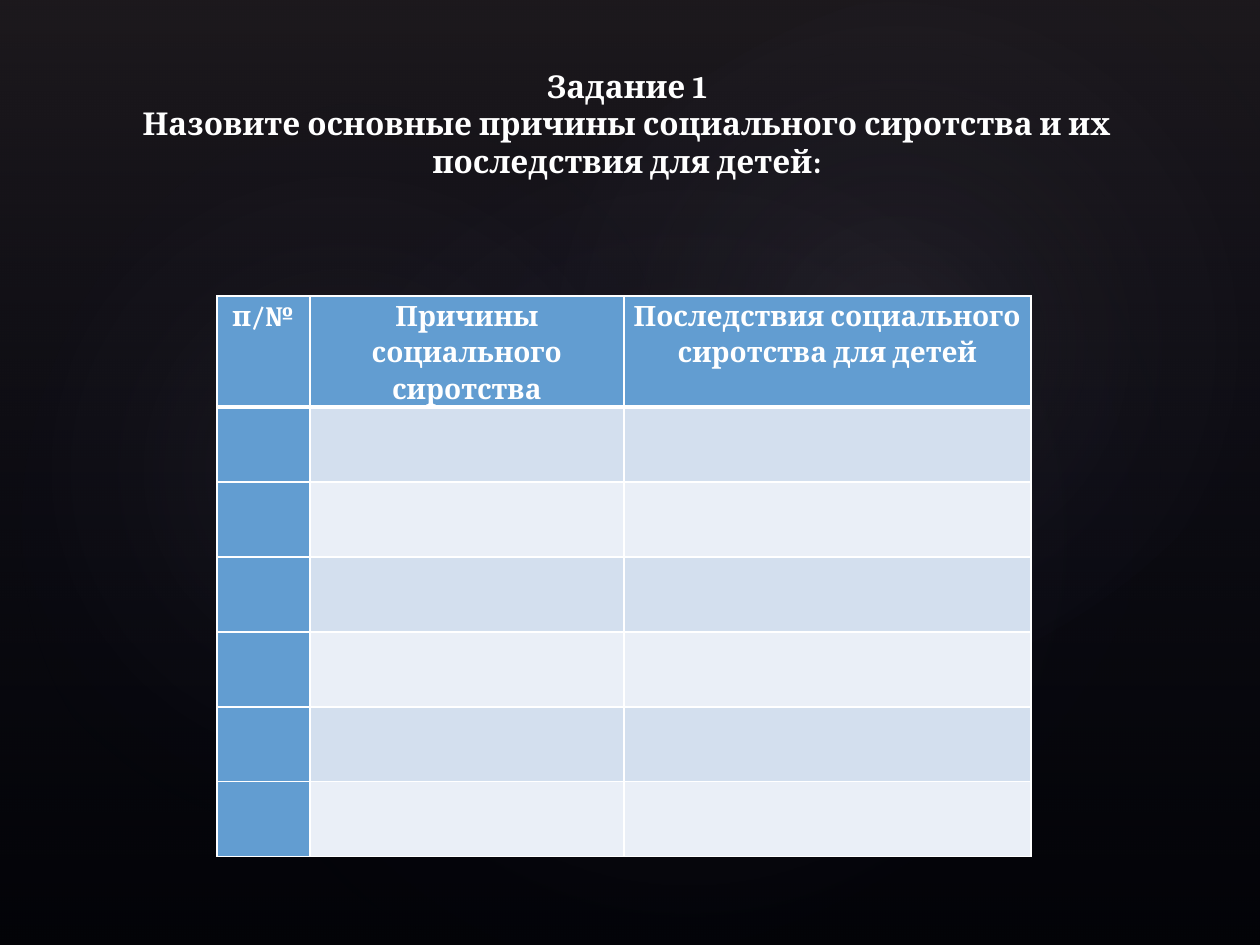
from lxml import etree
from pptx import Presentation
from pptx import util as u
from pptx.dml.color import RGBColor
from pptx.enum import shapes, text
from pptx.oxml import ns

PX = 914400 // 126
color = RGBColor.from_string


def write(frame, words, size, spacing=1.0):
    frame.text = words
    para = frame.paragraphs[0]
    para.alignment = text.PP_ALIGN.CENTER
    para.line_spacing = spacing
    for span in para.runs:
        span.font.name = "Cambria"
        span.font.size = u.Pt(size)
        span.font.bold = True
        span.font.color.rgb = color("FFFFFF")


def add_child(parent, tag, **attributes):
    child = etree.SubElement(parent, ns.qn(tag))
    for key, value in attributes.items():
        child.set(key, str(value))
    return child


deck = Presentation()
deck.slide_width = 1260 * PX
deck.slide_height = 945 * PX
page = deck.slides.add_slide(deck.slide_layouts[5])
page.background.fill.solid()
page.background.fill.fore_color.rgb = color("000000")

shade = [(0, "504652", 36), (100, "242852", 10)]
soft_glow = [(0, "C4BCC6", 7), (58, "242852", 0)]
glow = [(0, "C4BCC6", 8), (58, "242852", 0)]
RECT, OVAL = shapes.MSO_SHAPE.RECTANGLE, shapes.MSO_SHAPE.OVAL
backdrop = [
    (RECT, 0, 0, 1260, 945, 0, shade),
    (OVAL, 189, 144, 998, 786, 328.7, soft_glow),
    (OVAL, -38, 161, 764, 617, 294.3, glow),
    (OVAL, 451, 16, 893, 655, 328.7, glow),
]
for kind, left, top, width, height, angle, stops in backdrop:
    light = page.shapes.add_shape(kind, left * PX, top * PX, width * PX, height * PX)
    light.rotation = angle
    light.shadow.inherit = False
    light.line.fill.background()
    light.fill.gradient()
    gradient = light.element.spPr.find(ns.qn("a:gradFill"))
    for child in list(gradient):
        gradient.remove(child)
    stop_list = add_child(gradient, "a:gsLst")
    for place, tint, opacity in stops:
        stop = add_child(stop_list, "a:gs", pos=place * 1000)
        add_child(add_child(stop, "a:srgbClr", val=tint), "a:alpha", val=opacity * 1000)
    if kind == RECT:
        add_child(gradient, "a:lin", ang=5400000, scaled=0)
    else:
        focus = add_child(gradient, "a:path", path="circle")
        add_child(focus, "a:fillToRect", l=50000, t=50000, r=50000, b=50000)

columns = [93, 314, 407]
rows = [111] + [75] * 6
headings = ["п/№", "Причины социального сиротства", "Последствия социального сиротства для детей"]
holder = page.shapes.add_table(
    len(rows), len(columns), 217 * PX, 296 * PX, sum(columns) * PX, sum(rows) * PX
)
table = holder.table
for column, width in zip(table.columns, columns):
    column.width = width * PX
for r, height in enumerate(rows):
    table.rows[r].height = height * PX
    for c, heading in enumerate(headings):
        cell = table.cell(r, c)
        cell.margin_left = cell.margin_right = 9 * PX
        cell.margin_top = cell.margin_bottom = 0
        cell.fill.solid()
        band = "D3DFEE" if r % 2 else "EAEFF7"
        cell.fill.fore_color.rgb = color("629DD1" if r == 0 or c == 0 else band)
        if r == 0:
            write(cell.text_frame, heading, 16, 1.15)

for i, properties in enumerate(holder.element.iter(ns.qn("a:tcPr"))):
    r = i // len(columns)
    for n, side in enumerate(["lnL", "lnR", "lnT", "lnB"]):
        thick = (r, side) in [(0, "lnB"), (1, "lnT")]
        border = add_child(properties, f"a:{side}", w=u.Pt(3 if thick else 1))
        add_child(add_child(border, "a:solidFill"), "a:srgbClr", val="FFFFFF")
        properties.insert(n, border)

title = page.shapes.title
title.left, title.top, title.width, title.height = 107 * PX, 26 * PX, 1040 * PX, 198 * PX
title.text_frame.word_wrap = True
title.text_frame.auto_size = text.MSO_AUTO_SIZE.NONE
title.text_frame.vertical_anchor = text.MSO_ANCHOR.BOTTOM
title.text_frame.margin_bottom = 44 * PX
write(
    title.text_frame,
    "Задание 1\vНазовите основные причины социального сиротства и их последствия для детей:",
    18,
)
title.element.getparent().append(title.element)

deck.save("out.pptx")
